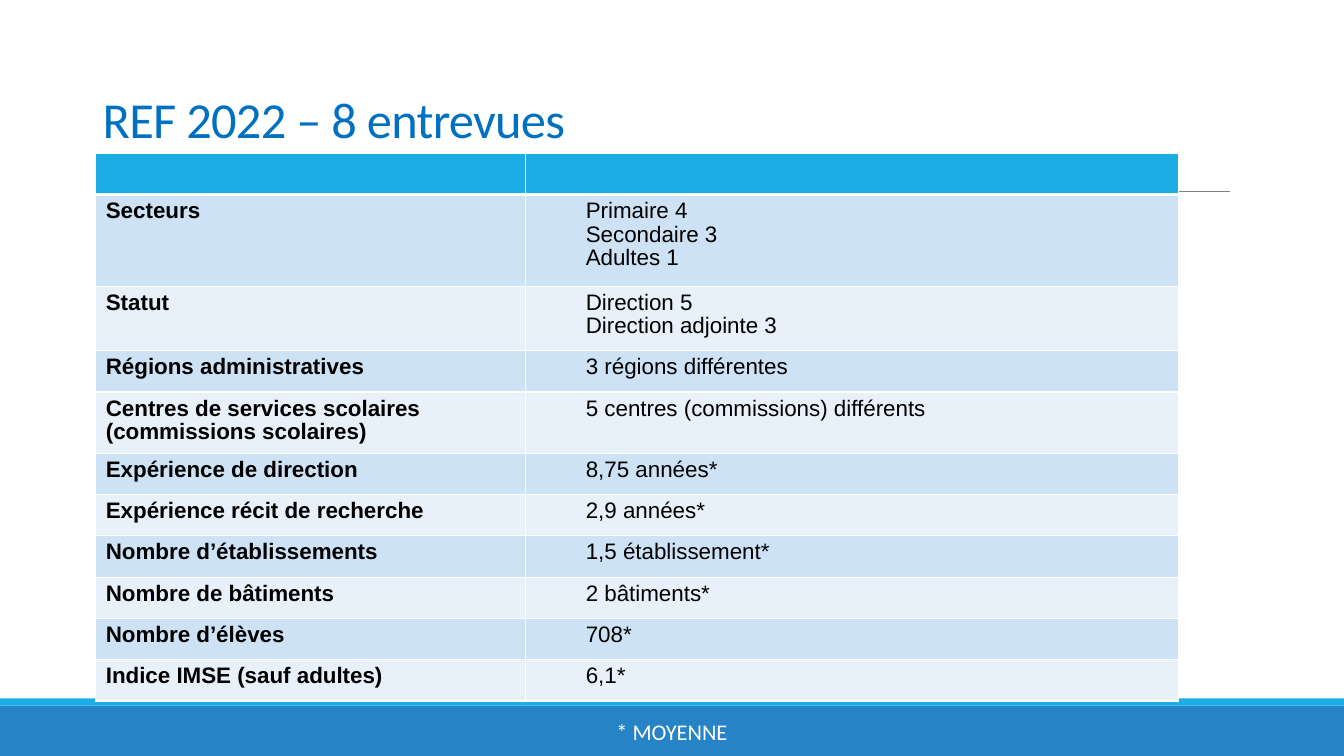
import dataclasses

import lxml.etree
import pptx
import pptx.dml.color
import pptx.enum.shapes
import pptx.enum.text
import pptx.oxml
import pptx.oxml.ns
import pptx.util

Inches = pptx.util.Inches
Pt = pptx.util.Pt
qn = pptx.oxml.ns.qn
Anchor = pptx.enum.text.MSO_ANCHOR
Align = pptx.enum.text.PP_ALIGN

COLORS = {
    "title": "0070C0",
    "footer": "2683C6",
    "accent": "1CADE4",
    "rule": "808080",
    "odd": "CDE3F5",
    "even": "E8F1FA",
    "text": "000000",
    "white": "FFFFFF",
}


@dataclasses.dataclass
class Row:
    label: str
    values: str
    height: float = 0.41


@dataclasses.dataclass
class Band:
    top: float
    height: float
    color: str


@dataclasses.dataclass
class Label:
    text: str
    box: tuple[float, float, float, float]
    size: int
    color: str
    anchor: Anchor
    align: Align
    line_spacing: float = 1.0
    tracking: int = 0


ROWS = [
    Row("", ""),
    Row("Secteurs", "Primaire 4\nSecondaire 3\nAdultes 1", 0.91),
    Row("Statut", "Direction 5\nDirection adjointe 3", 0.64),
    Row("Régions administratives", "3 régions différentes"),
    Row("Centres de services scolaires (commissions scolaires)",
        "5 centres (commissions) différents"),
    Row("Expérience de direction", "8,75 années*"),
    Row("Expérience récit de recherche", "2,9 années*"),
    Row("Nombre d’établissements", "1,5 établissement*"),
    Row("Nombre de bâtiments", "2 bâtiments*"),
    Row("Nombre d’élèves", "708*"),
    Row("Indice IMSE (sauf adultes)", "6,1*"),
]
COL_WIDTHS = [4.26, 6.48]
BANDS = [Band(7, 0.5, "footer"), Band(6.93, 0.07, "accent")]
TITLE = Label("REF 2022 – 8 entrevues", (0.92, 0.4, 11.5, 1.13), 36, "title",
              Anchor.BOTTOM, Align.LEFT, 0.85, -50)
FOOTNOTE = Label("* MOYENNE", (4.03, 7.06, 5.27, 0.4), 16, "white",
                 Anchor.MIDDLE, Align.CENTER)


def rgb(name: str) -> pptx.dml.color.RGBColor:
    return pptx.dml.color.RGBColor.from_string(COLORS[name])


def style_run(r, font: str, size: int, color: str, bold: bool = False) -> None:
    r.font.name = font
    r.font.size = Pt(size)
    r.font.color.rgb = rgb(color)
    r.font.bold = bold


def add_band(s, band: Band) -> None:
    sp = s.shapes.add_shape(pptx.enum.shapes.MSO_SHAPE.RECTANGLE, 0, Inches(band.top),
                            Inches(13.33), Inches(band.height))
    sp.shadow.inherit = False
    sp.fill.solid()
    sp.fill.fore_color.rgb = rgb(band.color)
    sp.line.fill.background()


def add_rule(s) -> None:
    line = s.shapes.add_connector(pptx.enum.shapes.MSO_CONNECTOR.STRAIGHT, Inches(1.31),
                                  Inches(1.9), Inches(12.2), Inches(1.9))
    line.line.color.rgb = rgb("rule")
    line.line.width = Pt(0.5)
    lxml.etree.SubElement(line._element.spPr, qn("a:effectLst"))


def add_label(s, label: Label) -> None:
    sp = s.shapes.add_textbox(*map(Inches, label.box))
    tf = sp.text_frame
    tf.word_wrap = True
    tf.vertical_anchor = label.anchor
    tf.text = label.text
    p = tf.paragraphs[0]
    p.alignment = label.align
    p.line_spacing = label.line_spacing
    r = p.runs[0]
    style_run(r, "Calibri", label.size, label.color)
    if label.tracking:
        r.font._element.set("spc", str(label.tracking))


def set_borders(cell, bottom: float) -> None:
    tc_pr = cell._tc.get_or_add_tcPr()
    for i, (side, width) in enumerate({"L": 1, "R": 1, "T": 1, "B": bottom}.items()):
        ln = lxml.etree.Element(qn(f"a:ln{side}"), w=str(Pt(width)))
        fill = lxml.etree.SubElement(ln, qn("a:solidFill"))
        lxml.etree.SubElement(fill, qn("a:srgbClr"), val=COLORS["white"])
        tc_pr.insert(i, ln)


def fill_cell(cell, text: str, fill: str, is_label: bool) -> None:
    cell.fill.solid()
    cell.fill.fore_color.rgb = rgb(fill)
    cell.text_frame.text = text
    for p in cell.text_frame.paragraphs:
        p.line_spacing = 0.95
        if not is_label:
            p._p.get_or_add_pPr().set("marL", str(Inches(0.5)))
        for r in p.runs:
            style_run(r, "Arial", 16, "text", bold=is_label)


def add_profile_table(s) -> None:
    table = s.shapes.add_table(len(ROWS), len(COL_WIDTHS), Inches(0.95), Inches(1.52),
                               Inches(sum(COL_WIDTHS)),
                               Inches(sum(row.height for row in ROWS))).table
    for col, width in zip(table.columns, COL_WIDTHS):
        col.width = Inches(width)
    for i, row in enumerate(ROWS):
        table.rows[i].height = Inches(row.height)
        fill = "accent" if i == 0 else "odd" if i % 2 else "even"
        for j, text in enumerate((row.label, row.values)):
            cell = table.cell(i, j)
            fill_cell(cell, text, fill, is_label=j == 0)
            set_borders(cell, bottom=3 if i == 0 else 1)


def main() -> None:
    prs = pptx.Presentation()
    prs.slide_width, prs.slide_height = Inches(13.33), Inches(7.5)
    s = prs.slides.add_slide(prs.slide_layouts[6])

    # Footer bands and title rule
    for band in BANDS:
        add_band(s, band)
    add_rule(s)

    # Title, table and footnote
    add_label(s, TITLE)
    add_profile_table(s)
    add_label(s, FOOTNOTE)

    prs.save("out.pptx")


if __name__ == "__main__":
    main()
